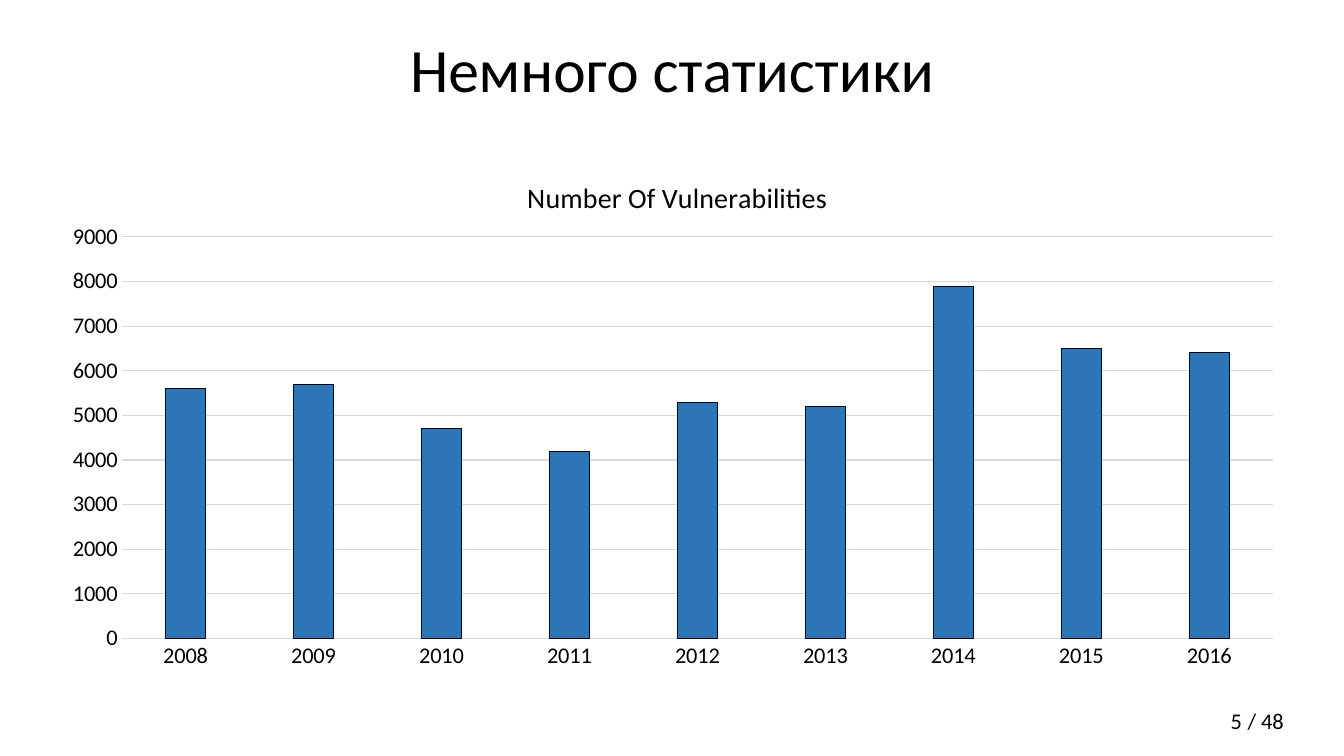
import pptx
import pptx.chart.data
import pptx.dml.color
import pptx.enum.chart
import pptx.enum.text
import pptx.oxml
import pptx.oxml.ns
import pptx.util
from pptx.util import Cm

ALIGN = pptx.enum.text.PP_ALIGN
ANCHOR = pptx.enum.text.MSO_ANCHOR
TICK = pptx.enum.chart.XL_TICK_MARK

VULNERABILITIES = {
    "2008": 5600, "2009": 5700, "2010": 4700, "2011": 4200, "2012": 5300,
    "2013": 5200, "2014": 7900, "2015": 6500, "2016": 6400,
}


def colour(value):
    return pptx.dml.color.RGBColor.from_string(value)


def assign(target, values):
    for name, value in values.items():
        setattr(target, name, value)


def place_in_chart(parent, **fractions):
    """Fix a chart part's position, as fractions of the chart area."""
    tag = pptx.oxml.ns.qn("c:layout")
    layout = parent.find(tag)
    if layout is None:
        layout = parent.makeelement(tag)
        parent.insert(0, layout)
    edges = "".join(f'<c:{edge}Mode val="edge"/>' for edge in "xy")
    sizes = "".join(f'<c:{name} val="{value}"/>' for name, value in fractions.items())
    target = '<c:layoutTarget val="inner"/>' if "w" in fractions else ""
    namespace = pptx.oxml.ns.nsdecls("c")
    layout.append(pptx.oxml.parse_xml(
        f"<c:manualLayout {namespace}>{target}{edges}{sizes}</c:manualLayout>"))


class SlideBuilder:
    font = "Calibri"
    ink = "000000"
    grid = "D9D9D9"
    bar = "2E75B6"
    hairline = 0.75

    def __init__(self, deck):
        self.page = deck.slides.add_slide(deck.slide_layouts[5])

    def style_font(self, font, size):
        assign(font, {"name": self.font, "size": pptx.util.Pt(size), "bold": False})
        font.color.rgb = colour(self.ink)

    def style_line(self, line, value):
        line.color.rgb = colour(value)
        line.width = pptx.util.Pt(self.hairline)

    def fill_text(self, box, text, size, frame_format, para_format):
        assign(box.text_frame, frame_format)
        para = box.text_frame.paragraphs[0]
        assign(para, para_format)
        span = para.add_run()
        span.text = text
        self.style_font(span.font, size)

    def title(self, text, left, top, width, height):
        box = self.page.shapes.title
        assign(box, {"left": left, "top": top, "width": width, "height": height})
        self.fill_text(box, text, 44,
                       {"vertical_anchor": ANCHOR.MIDDLE, "word_wrap": True,
                        "auto_size": pptx.enum.text.MSO_AUTO_SIZE.NONE},
                       {"alignment": ALIGN.CENTER, "line_spacing": 0.9})

    def label(self, text, left, top, width, height, wrap, anchor, alignment):
        box = self.page.shapes.add_textbox(left, top, width, height)
        self.fill_text(box, text, 16, {"word_wrap": wrap, "vertical_anchor": anchor},
                       {"alignment": alignment})

    def column_chart(self, heading, values, left, top, width, height):
        data = pptx.chart.data.CategoryChartData()
        data.categories = list(values)
        data.add_series(heading, list(values.values()))
        chart = self.page.shapes.add_chart(
            pptx.enum.chart.XL_CHART_TYPE.COLUMN_CLUSTERED,
            left, top, width, height, data).chart
        self.style_font(chart.font, 10)
        assign(chart, {"has_legend": False, "has_title": True})

        para = chart.chart_title.text_frame.paragraphs[0]
        span = para.add_run()
        span.text = heading
        self.style_font(span.font, 20)

        plot = chart.plots[0]
        assign(plot, {"gap_width": 219, "vary_by_categories": False})
        columns = plot.series[0].format
        columns.fill.solid()
        columns.fill.fore_color.rgb = colour(self.bar)
        self.style_line(columns.line, self.ink)

        for axis in (chart.category_axis, chart.value_axis):
            assign(axis, {"major_tick_mark": TICK.NONE, "minor_tick_mark": TICK.NONE})
            self.style_font(axis.tick_labels.font, 16)
        self.style_line(chart.category_axis.format.line, self.grid)
        assign(chart.value_axis, {"minimum_scale": 0, "maximum_scale": 9000,
                                  "major_unit": 1000, "has_major_gridlines": True})
        chart.value_axis.format.line.fill.background()
        self.style_line(chart.value_axis.major_gridlines.format.line, self.grid)

        root = chart.element
        place_in_chart(root.find(".//" + pptx.oxml.ns.qn("c:title")), x=0.38, y=0.05)
        place_in_chart(root.find(".//" + pptx.oxml.ns.qn("c:plotArea")),
                       x=0.06, y=0.17, w=0.92, h=0.75)


def main():
    deck = pptx.Presentation()
    assign(deck, {"slide_width": Cm(33.87), "slide_height": Cm(19.05)})
    slide = SlideBuilder(deck)
    slide.label("/ 48", Cm(31.19), Cm(17.7), Cm(1.45), Cm(0.94),
                False, ANCHOR.TOP, ALIGN.LEFT)
    slide.title("Немного статистики", Cm(2.34), Cm(0), Cm(29.21), Cm(3.68))
    slide.label("5", Cm(23.93), Cm(17.65), Cm(7.62), Cm(1.02),
                True, ANCHOR.MIDDLE, ALIGN.RIGHT)
    slide.column_chart("Number Of Vulnerabilities", VULNERABILITIES,
                       Cm(1.17), Cm(3.68), Cm(31.55), Cm(13.49))
    deck.save("out.pptx")


if __name__ == "__main__":
    main()
